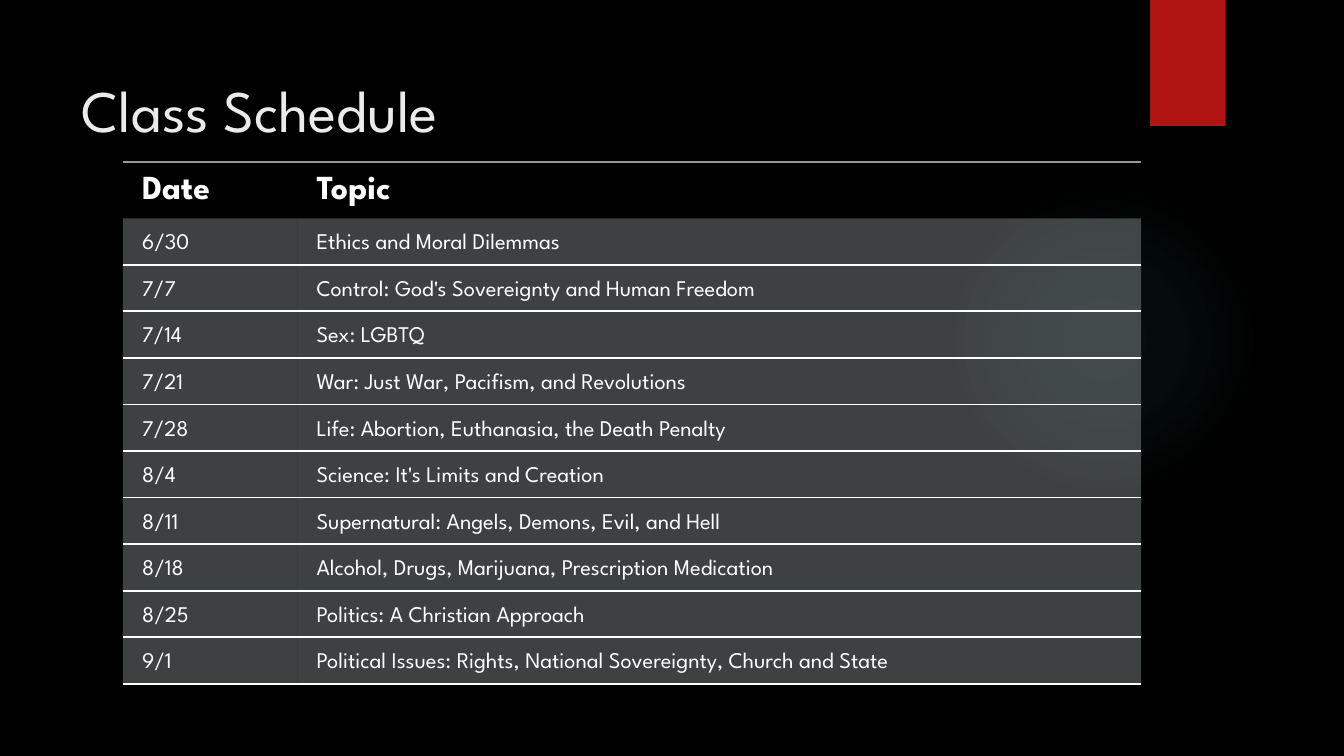
from dataclasses import dataclass
from typing import NamedTuple

from lxml.etree import SubElement
from pptx import Presentation
from pptx.dml.color import RGBColor
from pptx.enum.shapes import MSO_SHAPE
from pptx.enum.text import MSO_ANCHOR, MSO_AUTO_SIZE, PP_ALIGN
from pptx.oxml import parse_xml
from pptx.oxml.ns import nsdecls, qn
from pptx.util import Inches, Pt


@dataclass(frozen=True)
class Theme:
    font: str = "League Spartan"
    background: str = "000000"
    title: str = "EBEBEB"
    text: str = "FFFFFF"
    accent: str = "B01513"
    glow: str = "50B9C1"
    row: str = "B4BCBE"
    header_rule: str = "8F9A9D"
    title_size: int = 42
    header_size: int = 24
    body_size: int = 16
    rule_width: float = 1.5


class Area(NamedTuple):
    """Left, top, width and height in percent of the slide."""
    left: float
    top: float
    width: float
    height: float


class Session(NamedTuple):
    date: str
    topic: str


class Rule(NamedTuple):
    color: str
    opacity: int = 100


THEME = Theme()
WIDTH, HEIGHT = Inches(13.333), Inches(7.5)
GLOW_AREA = Area(70.58, 24.4, 23.1, 41.07)
RIBBON_AREA = Area(85.58, 0, 5.62, 16.67)
TITLE_AREA = Area(5.32, 6.67, 77.18, 20.4)
TABLE_LEFT, TABLE_TOP = 9.15, 21.4
COLUMN_WIDTHS = (12.98, 62.78)
HEADER_HEIGHT, ROW_HEIGHT = 7.47, 6.16

HEADER = Session("Date", "Topic")
SESSIONS = (
    Session("6/30", "Ethics and Moral Dilemmas"),
    Session("7/7", "Control: God's Sovereignty and Human Freedom"),
    Session("7/14", "Sex: LGBTQ"),
    Session("7/21", "War: Just War, Pacifism, and Revolutions"),
    Session("7/28", "Life: Abortion, Euthanasia, the Death Penalty"),
    Session("8/4", "Science: It's Limits and Creation"),
    Session("8/11", "Supernatural: Angels, Demons, Evil, and Hell"),
    Session("8/18", "Alcohol, Drugs, Marijuana, Prescription Medication"),
    Session("8/25", "Politics: A Christian Approach"),
    Session("9/1", "Political Issues: Rights, National Sovereignty, Church and State"),
)


def across(percent: float) -> int:
    return round(WIDTH * percent / 100)


def down(percent: float) -> int:
    return round(HEIGHT * percent / 100)


def place(area: Area) -> tuple[int, int, int, int]:
    return across(area.left), down(area.top), across(area.width), down(area.height)


def write(frame, text: str, *, size: int, color: str, bold: bool = False) -> None:
    para = frame.paragraphs[0]
    para.alignment = PP_ALIGN.LEFT
    span = para.add_run()
    span.text = text
    span.font.name = THEME.font
    span.font.size = Pt(size)
    span.font.bold = bold
    span.font.color.rgb = RGBColor.from_string(color)


def add_color(parent, color: str, opacity: int) -> None:
    value = SubElement(parent, qn("a:srgbClr"), val=color)
    SubElement(value, qn("a:alpha"), val=str(opacity * 1000))


def add_plain_shape(page, kind: MSO_SHAPE, area: Area, color: str):
    shape = page.shapes.add_shape(kind, *place(area))
    shape.shadow.inherit = False
    shape.fill.solid()
    shape.fill.fore_color.rgb = RGBColor.from_string(color)
    shape.line.fill.background()
    return shape


def add_glow(page) -> None:
    properties = add_plain_shape(page, MSO_SHAPE.OVAL, GLOW_AREA, THEME.glow).element.spPr
    gradient = parse_xml(
        f'<a:gradFill {nsdecls("a")}><a:gsLst/><a:path path="circle">'
        '<a:fillToRect l="50000" t="50000" r="50000" b="50000"/></a:path></a:gradFill>')
    for position, opacity in ((0, 7), (36, 6), (69, 0), (100, 0)):
        stop = SubElement(gradient[0], qn("a:gs"), pos=str(position * 1000))
        add_color(stop, THEME.glow, opacity)
    properties.replace(properties.find(qn("a:solidFill")), gradient)


def add_ribbon(page) -> None:
    ribbon = add_plain_shape(page, MSO_SHAPE.RECTANGLE, RIBBON_AREA, THEME.accent)
    effects = ribbon.element.spPr.find(qn("a:effectLst"))
    shadow = SubElement(effects, qn("a:outerShdw"), blurRad=str(Pt(3)),
                        dist=str(Pt(2)), dir="5400000", rotWithShape="0")
    add_color(shadow, THEME.background, 45)


def add_title(page, text: str) -> None:
    title = page.shapes.title
    title.left, title.top, title.width, title.height = place(TITLE_AREA)
    frame = title.text_frame
    frame.auto_size = MSO_AUTO_SIZE.NONE
    frame.vertical_anchor = MSO_ANCHOR.TOP
    frame.margin_top = Inches(0.23)
    write(frame, text, size=THEME.title_size, color=THEME.title)


def set_borders(cell, top: Rule | None, bottom: Rule | None) -> None:
    """Rule the cell above and below, and leave its sides open."""
    properties = cell._tc.get_or_add_tcPr()
    for side, rule in (("L", None), ("R", None), ("T", top), ("B", bottom)):
        line = SubElement(properties, qn(f"a:ln{side}"), w=str(Pt(THEME.rule_width)))
        if rule:
            add_color(SubElement(line, qn("a:solidFill")), rule.color, rule.opacity)
        else:
            SubElement(line, qn("a:noFill"))


def fill_cell(cell, text: str, is_header: bool, top: Rule | None, bottom: Rule | None) -> None:
    cell.vertical_anchor = MSO_ANCHOR.BOTTOM
    cell.margin_left = Inches(0.19)
    cell.margin_top = cell.margin_right = cell.margin_bottom = Inches(0.11 if is_header else 0.1)
    set_borders(cell, top, bottom)
    if is_header:
        cell.fill.background()
    else:
        cell.fill.solid()
        cell.fill.fore_color.rgb = RGBColor.from_string(THEME.row)
        color = cell._tc.tcPr.find(qn("a:solidFill"))[0]
        SubElement(color, qn("a:alpha"), val="35000")
    size = THEME.header_size if is_header else THEME.body_size
    write(cell.text_frame, text, size=size, color=THEME.text, bold=is_header)


def add_schedule(page) -> None:
    lines = (HEADER, *SESSIONS)
    area = Area(TABLE_LEFT, TABLE_TOP, sum(COLUMN_WIDTHS),
                HEADER_HEIGHT + ROW_HEIGHT * len(SESSIONS))
    table = page.shapes.add_table(len(lines), len(COLUMN_WIDTHS), *place(area)).table
    table.first_row = table.horz_banding = False
    for column, width in zip(table.columns, COLUMN_WIDTHS):
        column.width = across(width)
    white = Rule(THEME.text)
    for index, (row, session) in enumerate(zip(table.rows, lines)):
        is_header = index == 0
        row.height = down(HEADER_HEIGHT if is_header else ROW_HEIGHT)
        top = Rule(THEME.header_rule, 60) if is_header else white if index > 1 else None
        bottom = None if is_header else white
        for cell, text in zip(row.cells, session):
            fill_cell(cell, text, is_header, top, bottom)


def main() -> None:
    deck = Presentation()
    deck.slide_width, deck.slide_height = WIDTH, HEIGHT
    page = deck.slides.add_slide(deck.slide_layouts.get_by_name("Title Only"))
    page.background.fill.solid()
    page.background.fill.fore_color.rgb = RGBColor.from_string(THEME.background)
    add_glow(page)
    add_ribbon(page)
    add_title(page, "Class Schedule")
    add_schedule(page)
    deck.save("out.pptx")


if __name__ == "__main__":
    main()
